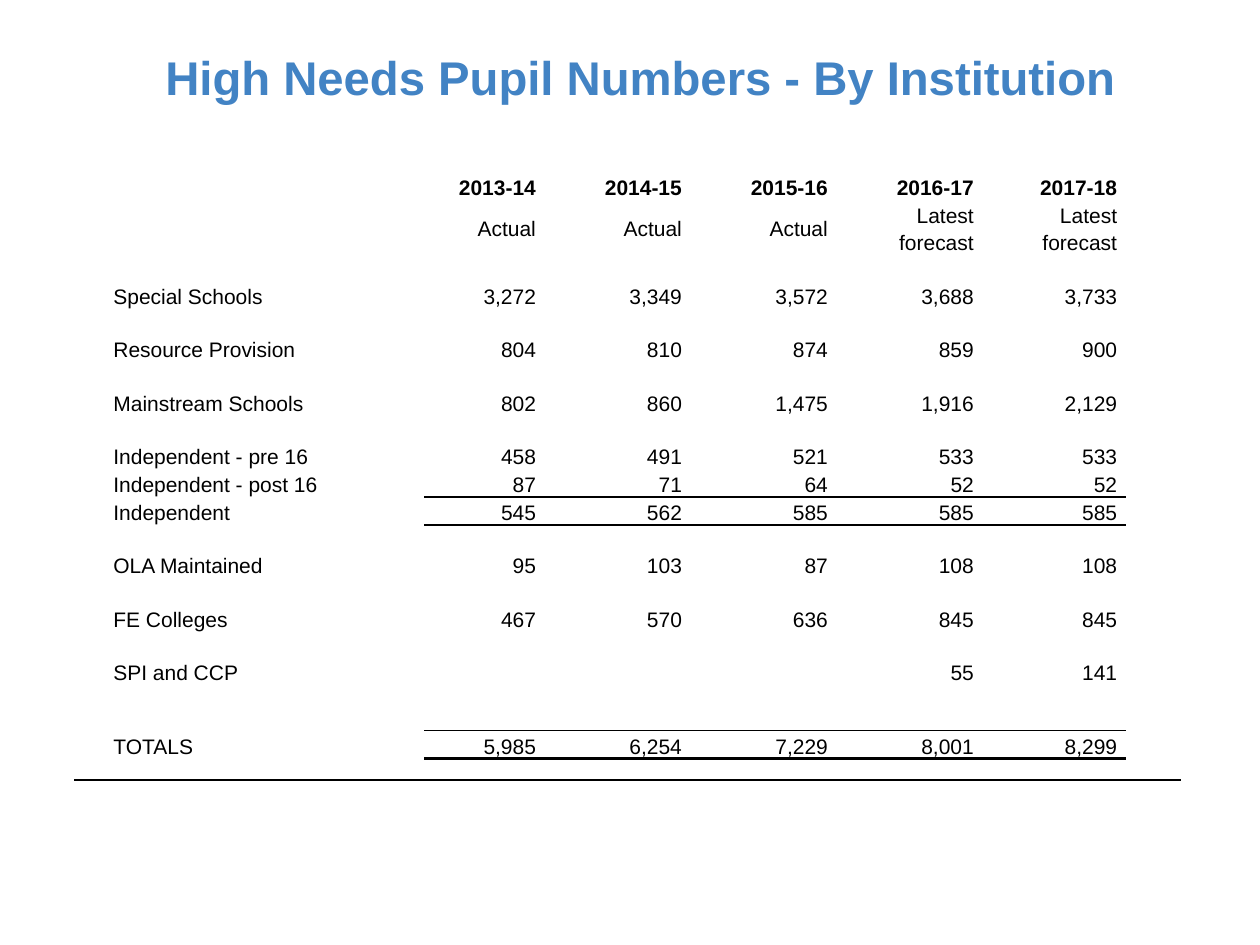
from lxml.etree import SubElement
from pptx import Presentation
from pptx.dml.color import RGBColor
from pptx.enum.shapes import MSO_CONNECTOR
from pptx.enum.text import MSO_ANCHOR, PP_ALIGN
from pptx.oxml import parse_xml
from pptx.oxml.ns import nsdecls, qn
from pptx.util import Pt

BLACK = RGBColor(0x00, 0x00, 0x00)
BLUE = RGBColor(0x42, 0x83, 0xC4)

PLAIN = "{2D5ABB26-0587-4C30-8999-92F81FD0307C}"
HEAD = {"name": "Arial", "size": Pt(27), "bold": True}
BODY = {"name": "Arial", "size": Pt(12), "bold": False}
BOLD = {**BODY, "bold": True}
INSET = {"margin_left": Pt(5), "margin_right": Pt(5),
         "margin_top": 0, "margin_bottom": 0}
WIDTHS = [182.6, 68.9, 83.4, 83.4, 83.4, 81.9]
FULL, GAP = 16, 14.5

ROWS = [
    (32, []),
    (FULL, ["", "2013-14", "2014-15", "2015-16", "2016-17", "2017-18"]),
    (32, ["", "Actual", "Actual", "Actual", "Latest forecast", "Latest forecast"]),
    (GAP, []),
    (FULL, ["Special Schools", "3,272", "3,349", "3,572", "3,688", "3,733"]),
    (GAP, []),
    (FULL, ["Resource Provision", "804", "810", "874", "859", "900"]),
    (GAP, []),
    (FULL, ["Mainstream Schools", "802", "860", "1,475", "1,916", "2,129"]),
    (GAP, []),
    (FULL, ["Independent - pre 16", "458", "491", "521", "533", "533"]),
    (FULL, ["Independent - post 16", "87", "71", "64", "52", "52"]),
    (FULL, ["Independent", "545", "562", "585", "585", "585"]),
    (GAP, []),
    (FULL, ["OLA Maintained", "95", "103", "87", "108", "108"]),
    (GAP, []),
    (FULL, ["FE Colleges", "467", "570", "636", "845", "845"]),
    (GAP, []),
    (FULL, ["SPI and CCP", "", "", "", "55", "141"]),
    (26, []),
    (FULL, ["TOTALS", "5,985", "6,254", "7,229", "8,001", "8,299"]),
]
YEARS, KINDS, POST, SUM, LAST = 1, 2, 11, 12, len(ROWS) - 1
RULES = {
    POST: [("lnB", 1)],
    SUM: [("lnT", 1)],
    LAST - 1: [("lnB", 1)],
    LAST: [("lnT", 1), ("lnB", 2.25)],
}


def apply(item, form):
    for key, value in form.items():
        setattr(item, key, value)


def add_title(slide, text):
    title = slide.shapes.title
    apply(title, {"left": Pt(60), "top": Pt(21), "width": Pt(612), "height": Pt(45)})
    frame = title.text_frame
    apply(frame, {"text": text, "word_wrap": True, "vertical_anchor": MSO_ANCHOR.MIDDLE})
    para = frame.paragraphs[0]
    para.alignment = PP_ALIGN.CENTER
    font = para.runs[0].font
    apply(font, HEAD)
    font.color.rgb = BLUE


def add_rule(slide, left, right, top):
    rule = slide.shapes.add_connector(
        MSO_CONNECTOR.STRAIGHT, Pt(left), Pt(top), Pt(right), Pt(top))
    rule.line.color.rgb = BLACK
    rule.line.width = Pt(1)
    SubElement(rule._element.spPr, qn("a:effectLst"))


def add_edge(cell, tag, width, place):
    edge = parse_xml(
        f'<a:{tag} {nsdecls("a")} w="{Pt(width)}"><a:solidFill>'
        f'<a:srgbClr val="{BLACK}"/></a:solidFill></a:{tag}>')
    cell._tc.get_or_add_tcPr().insert(place, edge)


def fill_cell(cell, text, form, align, anchor):
    apply(cell, {**INSET, "vertical_anchor": anchor})
    cell.fill.background()
    para = cell.text_frame.paragraphs[0]
    if not text:
        SubElement(para._p, qn("a:endParaRPr"), sz="1000")
        return
    apply(para, {"alignment": align, "line_spacing": 1.15})
    run = para.add_run()
    run.text = text
    apply(run.font, form)
    run.font.color.rgb = BLACK


def add_grid(slide):
    high = sum(size for size, _ in ROWS)
    frame = slide.shapes.add_table(
        len(ROWS), len(WIDTHS), Pt(59.8), Pt(66.2), Pt(sum(WIDTHS)), Pt(high))
    table = frame.table
    apply(table, {"first_row": False, "horz_banding": False})
    table._tbl.tblPr.find(qn("a:tableStyleId")).text = PLAIN
    for col, width in zip(table.columns, WIDTHS):
        col.width = Pt(width)
    for r, (size, texts) in enumerate(ROWS):
        table.rows[r].height = Pt(size)
        form = BOLD if r == YEARS else BODY
        anchor = MSO_ANCHOR.MIDDLE if r == KINDS else MSO_ANCHOR.BOTTOM
        for c, text in enumerate(texts or [""] * len(WIDTHS)):
            cell = table.cell(r, c)
            align = PP_ALIGN.RIGHT if c else PP_ALIGN.LEFT
            fill_cell(cell, text, form, align, anchor)
            for place, (tag, width) in enumerate(RULES.get(r, []) if c else []):
                add_edge(cell, tag, width, place)
    table.cell(0, 0).merge(table.cell(0, 1))


def main():
    deck = Presentation()
    apply(deck, {"slide_width": Pt(720), "slide_height": Pt(540)})
    slide = deck.slides.add_slide(deck.slide_layouts[0])
    extra = slide.placeholders[1]._element
    extra.getparent().remove(extra)
    add_rule(slide, 42.5, 674.6, 445.7)
    add_title(slide, "High Needs Pupil Numbers - By Institution")
    add_grid(slide)
    deck.save("out.pptx")


if __name__ == "__main__":
    main()
